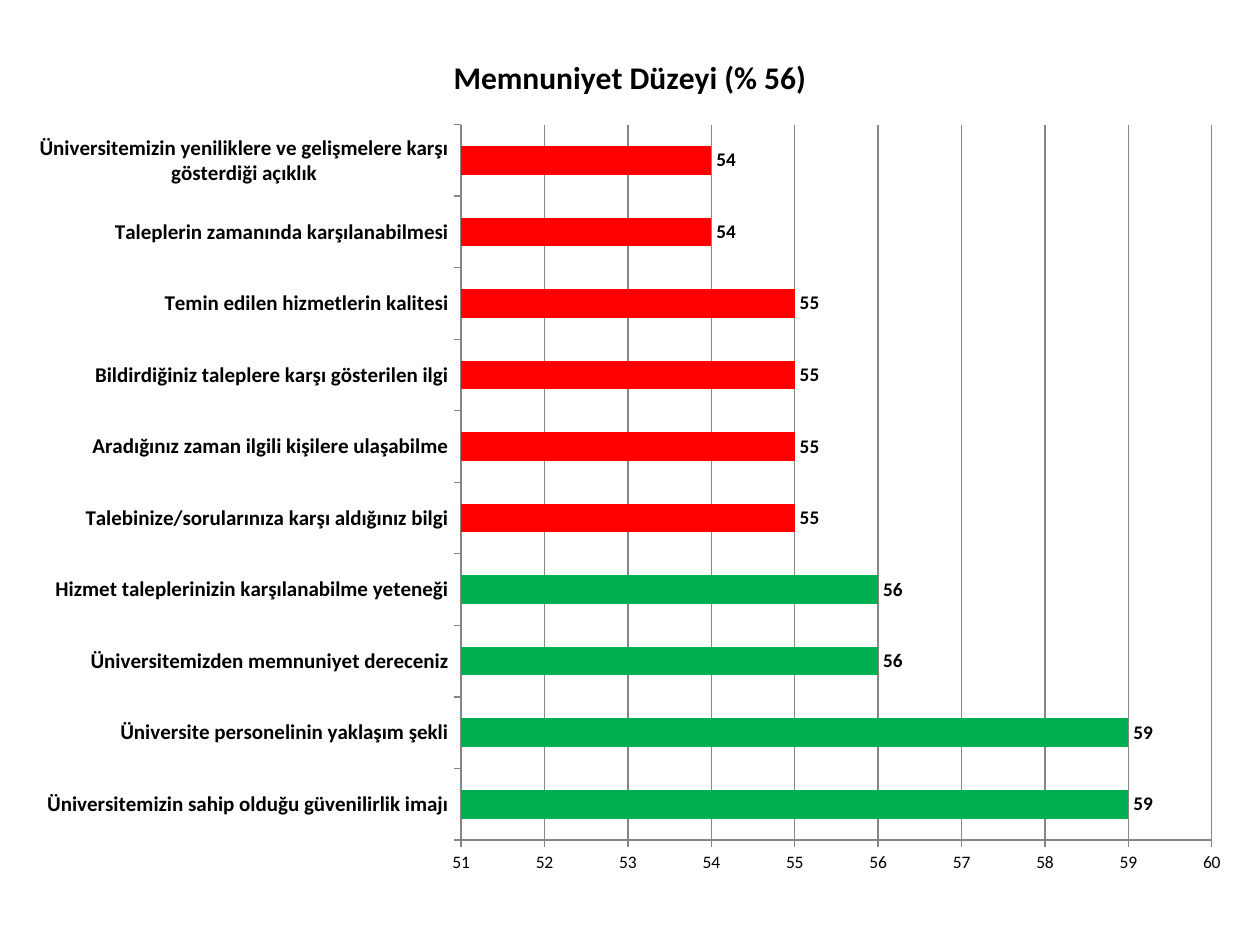
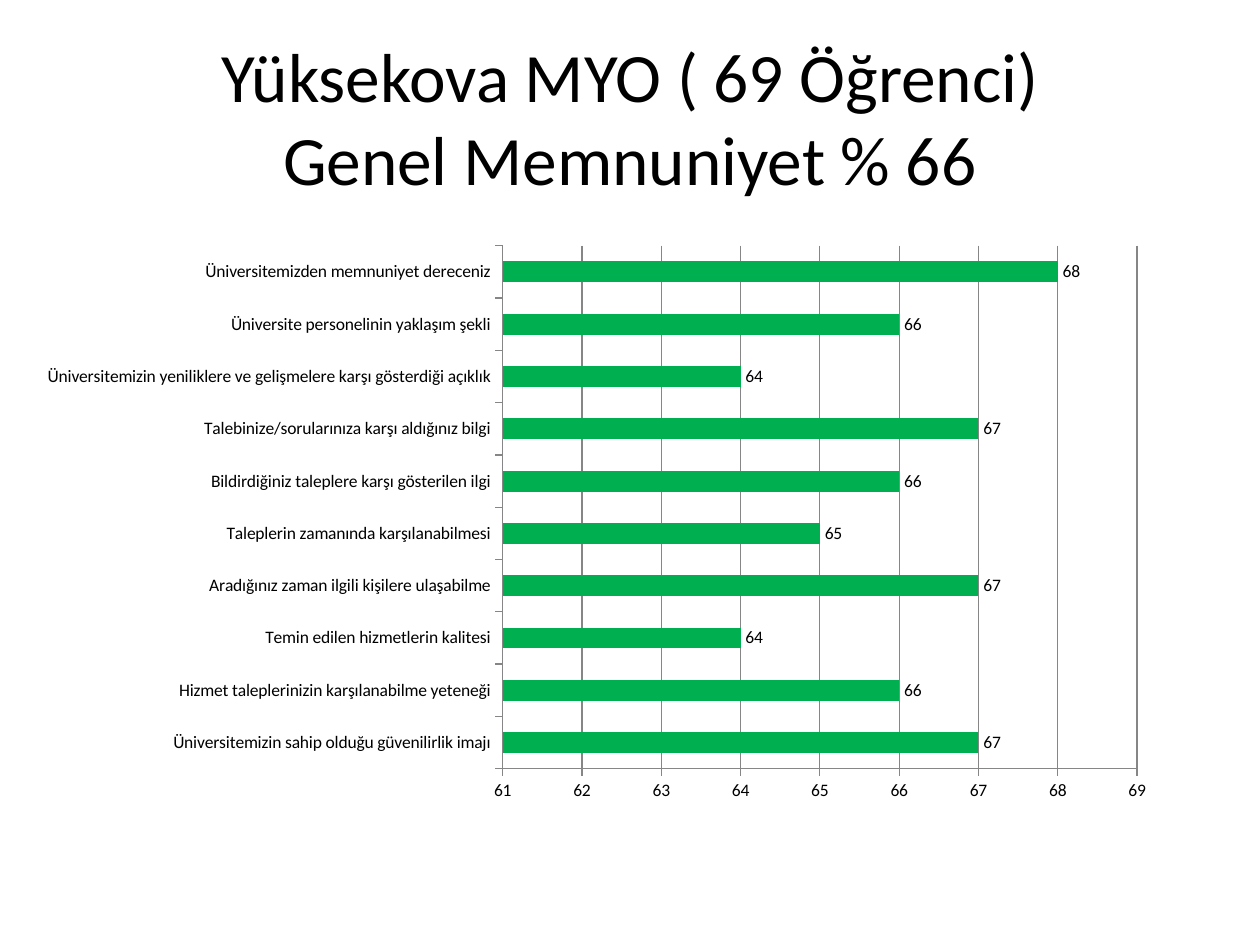
from dataclasses import dataclass

from pptx import Presentation
from pptx.chart.data import CategoryChartData
from pptx.dml.color import RGBColor
from pptx.enum.chart import XL_CHART_TYPE, XL_LABEL_POSITION, XL_TICK_MARK
from pptx.enum.text import MSO_ANCHOR, MSO_AUTO_SIZE, PP_ALIGN
from pptx.util import Cm, Pt

BAR = XL_CHART_TYPE.BAR_CLUSTERED
OUTSIDE = XL_TICK_MARK.OUTSIDE
NO_TICK = XL_TICK_MARK.NONE
OUTSIDE_END = XL_LABEL_POSITION.OUTSIDE_END
CENTER = PP_ALIGN.CENTER
MIDDLE = MSO_ANCHOR.MIDDLE
NO_AUTOFIT = MSO_AUTO_SIZE.NONE
TITLE_ONLY, BLANK = 5, 6

# Survey questions, shared by both charts
IMAGE = "Üniversitemizin sahip olduğu güvenilirlik imajı"
STAFF = "Üniversite personelinin yaklaşım şekli"
OVERALL = "Üniversitemizden memnuniyet dereceniz"
ABILITY = "Hizmet taleplerinizin karşılanabilme yeteneği"
INFORMATION = "Talebinize/sorularınıza karşı aldığınız bilgi"
ACCESS = "Aradığınız zaman ilgili kişilere ulaşabilme"
ATTENTION = "Bildirdiğiniz taleplere karşı gösterilen ilgi"
QUALITY = "Temin edilen hizmetlerin kalitesi"
TIMELINESS = "Taleplerin zamanında karşılanabilmesi"
OPENNESS = "Üniversitemizin yeniliklere ve gelişmelere karşı gösterdiği açıklık"

# Content: scores run from the bottom bar to the top bar
SLIDES = [
    {
        "chart_title": "Memnuniyet Düzeyi (% 56)",
        "series": "Memnuniyet Düzeyi (% 56)",
        "box": (0.3, 0.53, 24.8, 17.4),
        "scale": (51, 60),
        "average": 56,
        "bold": True,
        "category_size": 12,
        "label_size": 11,
        "scores": [
            (IMAGE, 59), (STAFF, 59), (OVERALL, 56), (ABILITY, 56),
            (INFORMATION, 55), (ACCESS, 55), (ATTENTION, 55),
            (QUALITY, 55), (TIMELINESS, 54), (OPENNESS, 54),
        ],
    },
    {
        "title": "Yüksekova MYO ( 69 Öğrenci)\vGenel Memnuniyet % 66",
        "series": "Series 1",
        "box": (0.5, 4.72, 23.06, 11.66),
        "scale": (61, 69),
        "bold": False,
        "category_size": 10,
        "label_size": 10,
        "scores": [
            (IMAGE, 67), (ABILITY, 66), (QUALITY, 64), (ACCESS, 67),
            (TIMELINESS, 65), (ATTENTION, 66), (INFORMATION, 67),
            (OPENNESS, 64), (STAFF, 66), (OVERALL, 68),
        ],
    },
]


@dataclass(frozen=True)
class Theme:
    font: str = "Calibri"
    text: RGBColor = RGBColor(0, 0, 0)
    good: RGBColor = RGBColor(0x00, 0xB0, 0x50)
    weak: RGBColor = RGBColor(0xFF, 0x00, 0x00)
    line: RGBColor = RGBColor(0x86, 0x86, 0x86)
    line_width: float = 0.75
    title_size: float = 39.6
    chart_title_size: float = 18
    axis_size: float = 10


THEME = Theme()
TITLE_BOX = (1.27, 0.76, 22.86, 3.18)


def set_all(target, values):
    for name, value in values.items():
        setattr(target, name, value)


def set_font(font, size, bold=False):
    set_all(font, {"name": THEME.font, "size": Pt(size), "bold": bold})
    font.color.rgb = THEME.text


def set_line(line):
    line.color.rgb = THEME.line
    line.width = Pt(THEME.line_width)


def add_title(slide, text):
    title = slide.shapes.title
    set_all(title, dict(zip(("left", "top", "width", "height"), map(Cm, TITLE_BOX))))
    frame = title.text_frame
    set_all(frame, {"text": text, "word_wrap": True,
                    "auto_size": NO_AUTOFIT, "vertical_anchor": MIDDLE})
    paragraph = frame.paragraphs[0]
    paragraph.alignment = CENTER
    for run in paragraph.runs:
        set_font(run.font, THEME.title_size)


def format_axes(chart, content):
    # Category axis
    category_axis = chart.category_axis
    set_font(category_axis.tick_labels.font, content["category_size"], content["bold"])

    # Value axis
    value_axis = chart.value_axis
    minimum, maximum = content["scale"]
    set_all(value_axis, {"minimum_scale": minimum, "maximum_scale": maximum,
                         "major_unit": 1, "has_major_gridlines": True})
    set_all(value_axis.tick_labels, {"number_format": "0",
                                     "number_format_is_linked": False})
    set_font(value_axis.tick_labels.font, THEME.axis_size)
    set_line(value_axis.major_gridlines.format.line)

    for axis in (category_axis, value_axis):
        set_all(axis, {"major_tick_mark": OUTSIDE, "minor_tick_mark": NO_TICK})
        set_line(axis.format.line)


def format_bars(plot, content):
    set_all(plot, {"gap_width": 150, "vary_by_categories": False,
                   "has_data_labels": True})
    labels = plot.data_labels
    set_all(labels, {"show_value": True, "number_format": "0",
                     "number_format_is_linked": False, "position": OUTSIDE_END})
    set_font(labels.font, content["label_size"], content["bold"])

    # Bars below the average are weak where an average is set
    series = plot.series[0]
    series.invert_if_negative = False
    average = content.get("average")
    series.format.fill.solid()
    series.format.fill.fore_color.rgb = THEME.weak if average else THEME.good
    if average:
        for index, (_, score) in enumerate(content["scores"]):
            if score >= average:
                fill = series.points[index].format.fill
                fill.solid()
                fill.fore_color.rgb = THEME.good


def add_score_chart(slide, content):
    data = CategoryChartData(number_format="0")
    data.categories, scores = zip(*content["scores"])
    data.add_series(content["series"], scores)
    chart = slide.shapes.add_chart(BAR, *map(Cm, content["box"]), data).chart
    set_font(chart.font, THEME.axis_size)
    set_all(chart, {"has_legend": False, "has_title": "chart_title" in content})
    if chart.has_title:
        frame = chart.chart_title.text_frame
        frame.text = content["chart_title"]
        set_font(frame.paragraphs[0].runs[0].font, THEME.chart_title_size, True)
        chart.chart_title.include_in_layout = False
    format_axes(chart, content)
    format_bars(chart.plots[0], content)


def main():
    presentation = Presentation()
    set_all(presentation, {"slide_width": Cm(25.4), "slide_height": Cm(19.05)})
    for content in SLIDES:
        layout = TITLE_ONLY if "title" in content else BLANK
        slide = presentation.slides.add_slide(presentation.slide_layouts[layout])
        if "title" in content:
            add_title(slide, content["title"])
        add_score_chart(slide, content)
    presentation.save("out.pptx")


if __name__ == "__main__":
    main()
